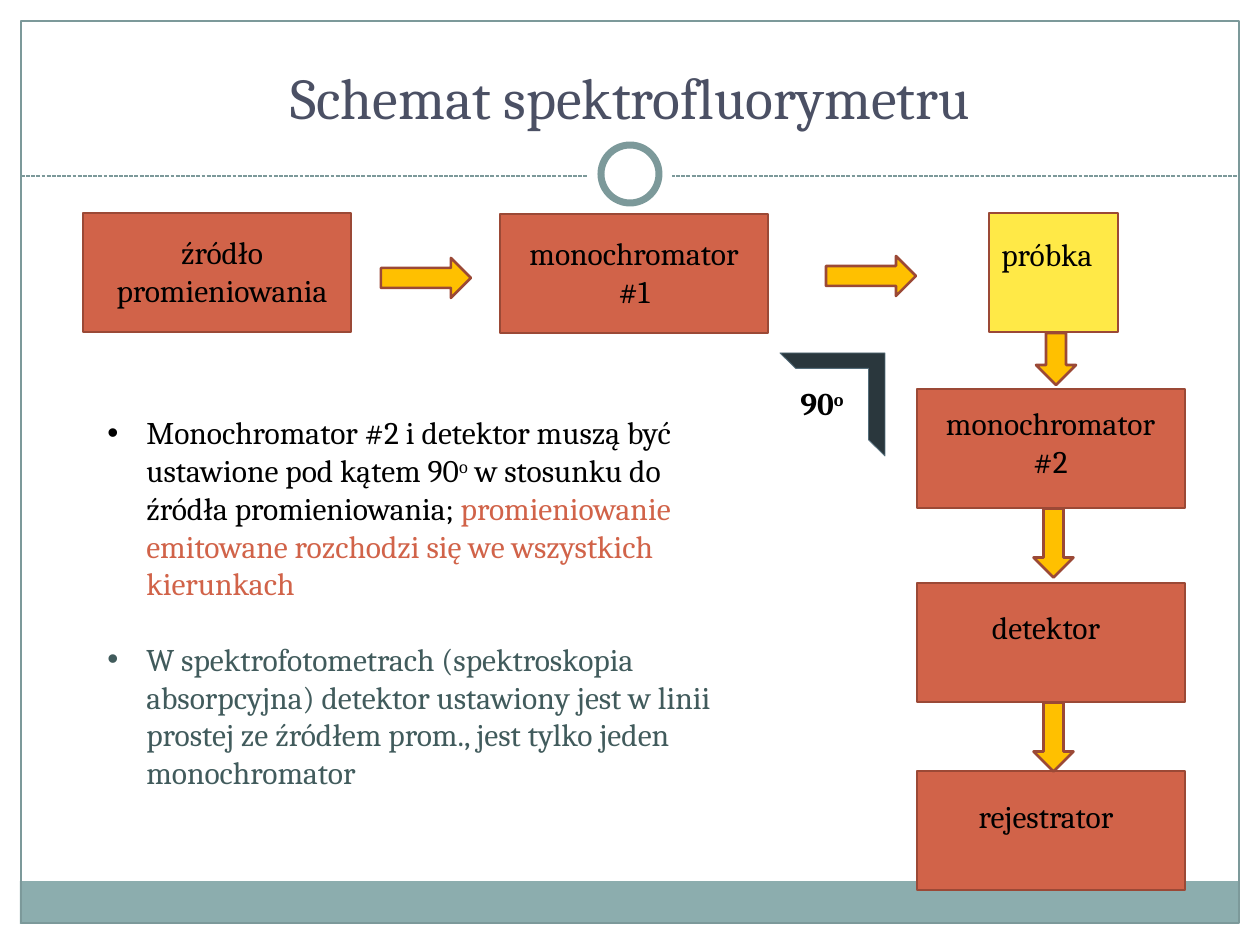
from dataclasses import dataclass

from lxml import etree
from pptx import Presentation
from pptx.dml.color import RGBColor
from pptx.enum.dml import MSO_LINE
from pptx.enum.shapes import MSO_CONNECTOR, MSO_SHAPE
from pptx.enum.text import MSO_ANCHOR, PP_ALIGN
from pptx.oxml.ns import qn
from pptx.util import Emu, Pt

RECT, OVAL = MSO_SHAPE.RECTANGLE, MSO_SHAPE.OVAL
ARROW, FRAME = MSO_SHAPE.RIGHT_ARROW, MSO_SHAPE.HALF_FRAME
LEFT, MID = PP_ALIGN.LEFT, PP_ALIGN.CENTER
TOP, BOTTOM = MSO_ANCHOR.TOP, MSO_ANCHOR.BOTTOM
SCALE = 914400 / 126


def px(n):
    return Emu(round(n * SCALE))


@dataclass(frozen=True)
class Theme:
    font: str = "Cambria"
    title: str = "4B5064"
    ink: str = "000000"
    paper: str = "FFFFFF"
    band: str = "8CADAE"
    trim: str = "7C999A"
    brick: str = "D16349"
    edge: str = "9B4936"
    sun: str = "FFE947"
    gold: str = "FFC000"
    dark: str = "2A373D"
    steel: str = "546D7A"
    moss: str = "415B5C"
    head: int = 33
    body: int = 18


class Deck:
    def __init__(self, theme):
        self.theme = theme
        self.file = Presentation()
        self.file.slide_width, self.file.slide_height = px(1260), px(945)
        self.slide = self.file.slides.add_slide(self.file.slide_layouts[6])

    def shape(self, kind, at, fill=None, line=None, width=1.5, turn=0):
        item = self.slide.shapes.add_shape(kind, *map(px, at))
        item.shadow.inherit = False
        item.rotation = turn
        if fill:
            item.fill.solid()
            item.fill.fore_color.rgb = RGBColor.from_string(fill)
        else:
            item.fill.background()
        if line:
            item.line.color.rgb = RGBColor.from_string(line)
            item.line.width = Pt(width)
        else:
            item.line.fill.background()
        return item

    def dash(self, x, y, end, color):
        item = self.slide.shapes.add_connector(
            MSO_CONNECTOR.STRAIGHT, px(x), px(y), px(end), px(y))
        item.line.color.rgb = RGBColor.from_string(color)
        item.line.width = Pt(0.75)
        item.line.dash_style = MSO_LINE.SQUARE_DOT
        etree.SubElement(item._element.spPr, qn("a:effectLst"))

    def text(self, at, words="", size=None, color=None, align=MID, anchor=TOP):
        frame = self.slide.shapes.add_textbox(*map(px, at)).text_frame
        frame.word_wrap = True
        frame.vertical_anchor = anchor
        frame.text = words
        para = frame.paragraphs[0]
        para.alignment = align
        for run in para.runs:
            self.style(run, size, color)
        return frame

    def style(self, run, size=None, color=None, bold=False, sup=False):
        font = run.font
        font.name = self.theme.font
        font.size = Pt(size or self.theme.body)
        font.color.rgb = RGBColor.from_string(color or self.theme.ink)
        if bold:
            font.bold = True
        if sup:
            run._r.get_or_add_rPr().set("baseline", "30000")

    def runs(self, para, parts, bold=False):
        """Fill para from (words, color, raised) parts."""
        for words, color, sup in parts:
            run = para.add_run()
            run.text = words
            self.style(run, color=color, bold=bold, sup=sup)

    def bullet(self, para, gap):
        para.space_before = Pt(gap)
        props = para._p.get_or_add_pPr()
        props.set("marL", str(px(39)))
        props.set("indent", str(-px(39)))
        etree.SubElement(props, qn("a:buFont"), typeface="Arial")
        etree.SubElement(props, qn("a:buChar"), char="•")


def main():
    theme = Theme()
    deck = Deck(theme)

    # Frame and title
    deck.shape(RECT, (20, 881, 1218, 43), theme.band)
    deck.shape(RECT, (21, 21, 1218, 902), line=theme.trim, width=0.75)
    deck.dash(21, 176, 1239, theme.trim)
    deck.shape(OVAL, (588, 132, 84, 84), theme.paper)
    deck.shape(OVAL, (601, 145, 58, 58), theme.paper, theme.trim, 4)
    deck.text((42, 32, 1176, 105), "Schemat spektrofluorymetru",
              theme.head, theme.title, anchor=BOTTOM)

    # Notes
    notes = [
        [("Monochromator #2 i detektor muszą być ustawione pod kątem 90",
          theme.ink, False),
         ("o", theme.ink, True),
         (" w stosunku do źródła promieniowania; ", theme.ink, False),
         ("promieniowanie emitowane rozchodzi się we wszystkich kierunkach",
          theme.brick, False)],
        [("W spektrofotometrach (spektroskopia absorpcyjna) detektor "
          "ustawiony jest w linii prostej ze źródłem prom., jest tylko "
          "jeden monochromator", theme.moss, False)],
    ]
    frame = deck.text((95, 407, 645, 432), align=LEFT)
    for i, parts in enumerate(notes):
        para = frame.add_paragraph() if i else frame.paragraphs[0]
        deck.bullet(para, 21.5 * i)
        deck.runs(para, parts)

    # Blocks: left, top, width, fill
    blocks = [
        (83, 213, 268, theme.brick),
        (917, 771, 268, theme.brick),
        (917, 583, 268, theme.brick),
        (917, 389, 268, theme.brick),
        (989, 213, 129, theme.sun),
        (500, 214, 268, theme.brick),
    ]
    for x, y, wide, fill in blocks:
        deck.shape(RECT, (x, y, wide, 119), fill, theme.edge)

    # Arrows: left, top, length, turn
    arrows = [
        (826, 256, 90, 0),
        (381, 258, 90, 0),
        (1030, 339, 52, 90),
        (1019, 717, 69, 90),
        (1019, 523, 69, 90),
    ]
    for x, y, size, turn in arrows:
        deck.shape(ARROW, (x, y, size, 40), theme.gold, theme.edge, turn=turn)

    labels = [
        ((93, 227, 258, 89), "źródło promieniowania", MID),
        ((505, 228, 258, 89), "monochromator #1", MID),
        ((989, 229, 129, 50), "próbka", LEFT),
        ((917, 398, 267, 89), "monochromator #2", MID),
        ((922, 602, 248, 50), "detektor", MID),
        ((927, 791, 238, 50), "rejestrator", MID),
    ]
    for at, words, align in labels:
        deck.text(at, words, align=align)

    # Right angle
    angle = deck.shape(FRAME, (781, 352, 103, 105), theme.dark,
                       theme.steel, 0.5, 90)
    angle.adjustments[0], angle.adjustments[1] = 0.16, 0.15
    mark = deck.text((788, 378, 89, 50), align=LEFT)
    deck.runs(mark.paragraphs[0],
              [("90", theme.ink, False), ("o", theme.ink, True)], bold=True)

    deck.file.save("out.pptx")


if __name__ == "__main__":
    main()
